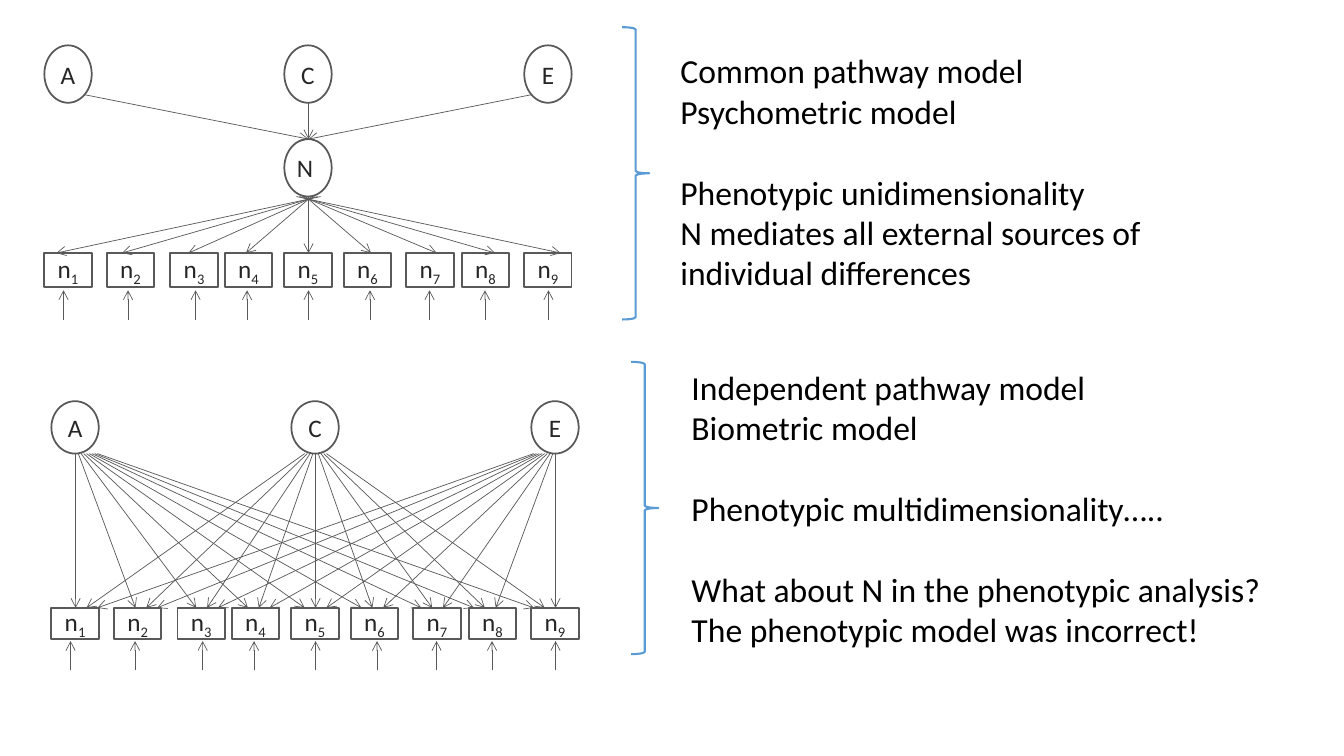
from dataclasses import dataclass

from pptx import Presentation
from pptx.dml.color import RGBColor
from pptx.enum.shapes import MSO_CONNECTOR, MSO_SHAPE
from pptx.enum.text import MSO_ANCHOR, MSO_AUTO_SIZE, PP_ALIGN
from pptx.oxml.ns import qn
from pptx.util import Pt
from lxml import etree

OVAL, RECT, BRACE = MSO_SHAPE.OVAL, MSO_SHAPE.RECTANGLE, MSO_SHAPE.RIGHT_BRACE
STRAIGHT = MSO_CONNECTOR.STRAIGHT
MIDDLE, CENTER = MSO_ANCHOR.MIDDLE, PP_ALIGN.CENTER
GROW = MSO_AUTO_SIZE.SHAPE_TO_FIT_TEXT
PX = 9144  # 100 px to the inch


@dataclass(frozen=True)
class Theme:
    font: str = "Calibri"
    ink: str = "262626"
    body: str = "000000"
    edge: str = "595959"
    brace: str = "5B9BD5"
    label: int = 18
    text: int = 24
    skip: int = 29
    thin: float = 0.5
    bold: float = 1.25
    wide: float = 1.5


def assign(item, values):
    for name, value in values.items():
        setattr(item, name, value)


class Board:
    def __init__(self, slide, theme):
        self.slide, self.theme = slide, theme

    def type(self, run, size, color):
        assign(run.font, {"name": self.theme.font, "size": Pt(size)})
        run.font.color.rgb = RGBColor.from_string(color)

    def stroke(self, item, color, width):
        item.line.color.rgb = RGBColor.from_string(color)
        item.line.width = Pt(width)

    def shape(self, kind, box, color, width):
        item = self.slide.shapes.add_shape(kind, *(v * PX for v in box))
        item.shadow.inherit = False
        item.fill.background()
        self.stroke(item, color, width)
        return item

    def node(self, kind, box, label, sub=""):
        """Draw an outlined node with a centred label and optional subscript."""
        look = self.theme
        item = self.shape(kind, box, look.edge, look.bold)
        frame = item.text_frame
        assign(frame, {"margin_left": 0, "margin_right": 0, "margin_top": 0,
                       "margin_bottom": 0, "vertical_anchor": MIDDLE,
                       "word_wrap": kind == RECT})
        para = frame.paragraphs[0]
        para.alignment = CENTER
        for text in filter(None, (label, sub)):
            run = para.add_run()
            run.text = text
            self.type(run, look.label, look.ink)
        if sub:
            run.font._element.set("baseline", "-25000")

    def arrow(self, *ends):
        line = self.slide.shapes.add_connector(
            STRAIGHT, *(round(v * PX) for v in ends))
        self.stroke(line, self.theme.edge, self.theme.thin)
        etree.SubElement(line.line._get_or_add_ln(), qn("a:tailEnd"), type="arrow")
        etree.SubElement(line._element.spPr, qn("a:effectLst"))

    def brace(self, box):
        self.shape(BRACE, box, self.theme.brace, self.theme.wide)

    def text(self, box, groups):
        """Write groups of paragraphs, with one line of space between groups."""
        look = self.theme
        frame = self.slide.shapes.add_textbox(*(v * PX for v in box)).text_frame
        assign(frame, {"word_wrap": True, "auto_size": GROW})
        para = None
        for num, group in enumerate(groups):
            for pos, line in enumerate(group):
                para = frame.add_paragraph() if para else frame.paragraphs[0]
                if num and not pos:
                    para.space_before = Pt(look.skip)
                run = para.add_run()
                run.text = line
                self.type(run, look.text, look.body)


MIDS = [68, 130, 193, 247, 306, 365, 427, 482, 544]
NUDGE = [-5, -3, 1, -2, 0, 2, -1, -1, 0]
ROOTS = {"A": 0, "C": 4, "E": 8}
WIDTH, HALF = 47, 24


def ovals(board, shift, top, tall):
    for name, home in ROOTS.items():
        board.node(OVAL, (MIDS[home] + shift - HALF, top, WIDTH, tall), name)


def items(board, shift, top, tall, foot):
    """Draw the row of observed variables with an arrow below each."""
    for num, (mid, nudge) in enumerate(zip(MIDS, NUDGE), 1):
        x = mid + shift
        board.node(RECT, (x - HALF, top, WIDTH, tall), "n", str(num))
        board.arrow(x + nudge, foot, x + nudge, foot - 29)


def fan(board, shift, home, top, low, gap):
    """Spread arrows from one root to all variables, gap px apart."""
    for pos, mid in enumerate(MIDS):
        step = gap * (pos - home)
        board.arrow(MIDS[home] + shift + step, top, mid + shift - step, low)


def common(board):
    ovals(board, 0, 45, 57)
    hub = MIDS[4]
    board.node(OVAL, (hub - HALF, 138, WIDTH, 57), "N ")
    for x, y in ((MIDS[0] + 16, 94), (hub, 102), (MIDS[8] - 17, 94)):
        board.arrow(x, y, hub, 138)
    fan(board, 0, 4, 195, 251, -3)
    items(board, 0, 251, 34, 317)
    board.brace((617, 27, 27, 290))
    board.text((665, 45, 583, 252), [
        ["Common pathway model", "Psychometric model"],
        ["Phenotypic unidimensionality",
         "N mediates all external sources of individual differences"]])


def direct(board):
    shift = 7
    ovals(board, shift, 398, 52)
    for home in ROOTS.values():
        fan(board, shift, home, 450, 603, 2.7)
    items(board, shift, 603, 31, 665)
    board.brace((626, 359, 27, 290))
    board.text((676, 359, 618, 293), [
        ["Independent pathway model", "Biometric model"],
        ["Phenotypic multidimensionality….."],
        ["What about N in the phenotypic analysis? "
         "The phenotypic model was incorrect!"]])


def main():
    deck = Presentation()
    assign(deck, {"slide_width": 1333 * PX, "slide_height": 750 * PX})
    board = Board(deck.slides.add_slide(deck.slide_layouts[6]), Theme())
    common(board)
    direct(board)
    deck.save("out.pptx")


if __name__ == "__main__":
    main()
